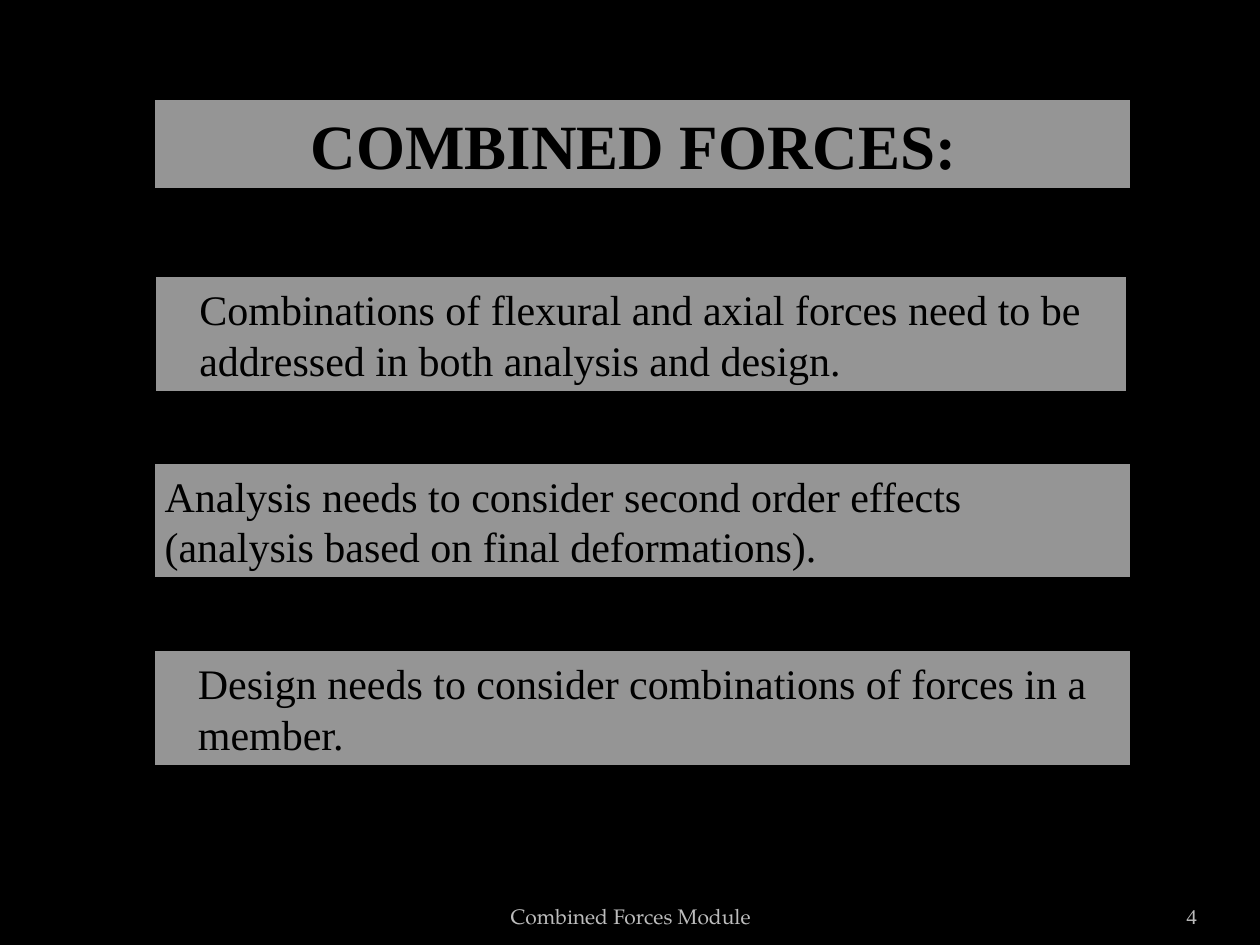
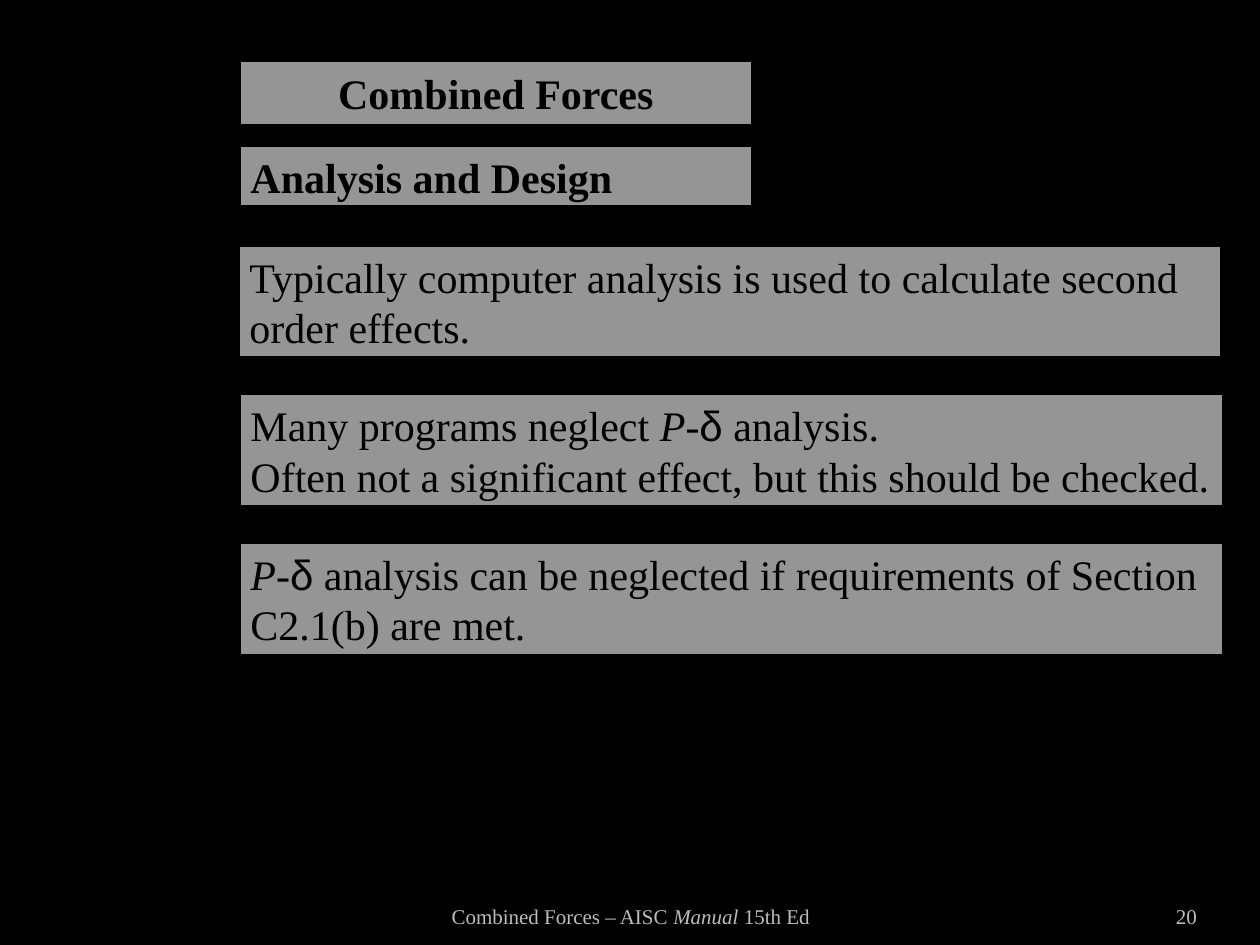
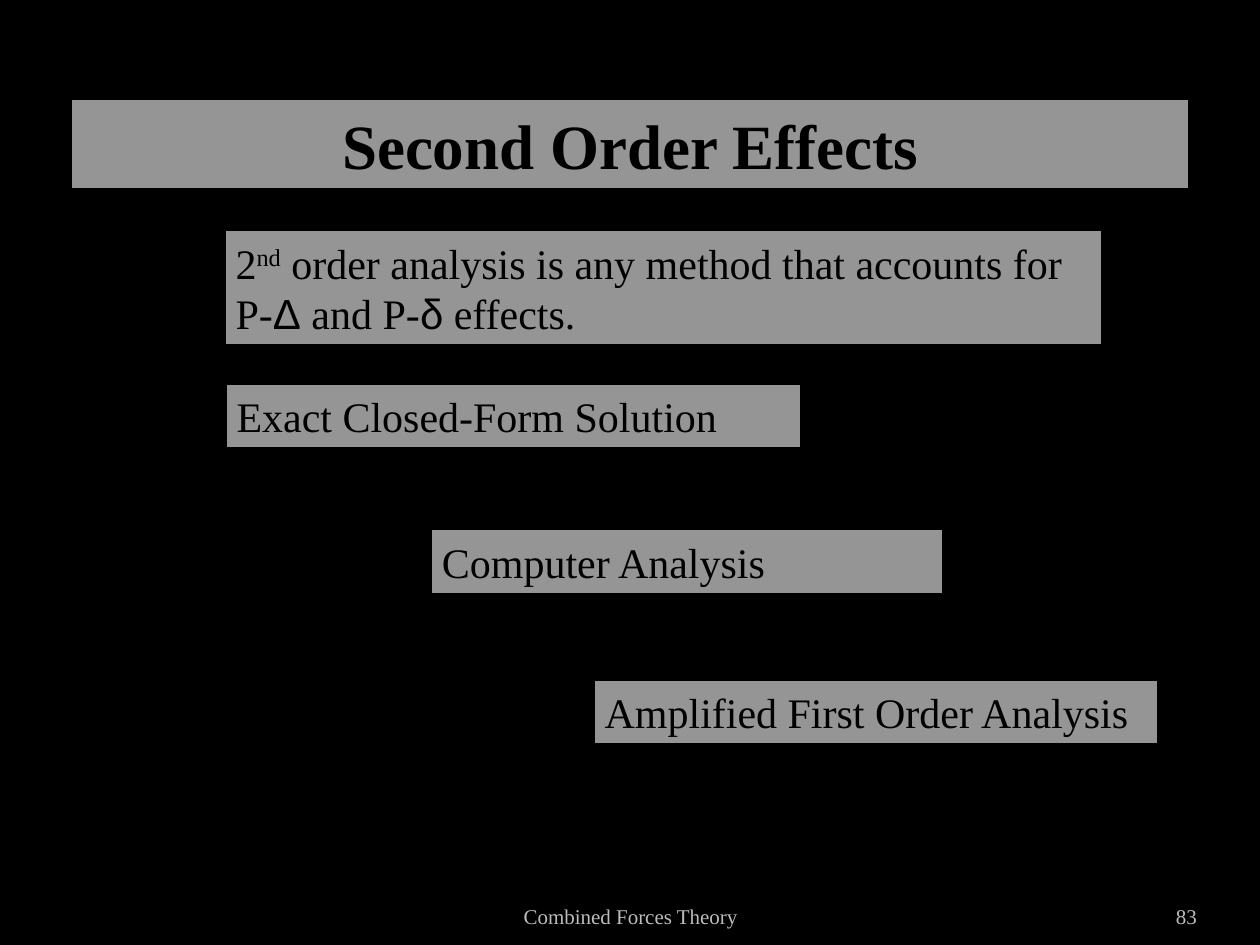
"""Build three slides on combined forces: grey translucent cards on black."""
from pptx import Presentation
from pptx.dml.color import RGBColor
from pptx.enum.shapes import MSO_SHAPE as Shape
from pptx.enum.text import MSO_ANCHOR as Anchor, MSO_AUTO_SIZE as AutoSize, PP_ALIGN as Align
from pptx.oxml.ns import qn
from pptx.util import Cm, Pt
from lxml import etree

SERIF, GREEK, FOOTER_SERIF = "Times New Roman", "Arial", "TeX Gyre Pagella"
BLACK, CARD, MUTED = "000000", "F2F2F2", "BCBCBC"
CARD_ALPHA = "62000"
INSET = 0.25
INDENTED = 0.92


def paint(fill, color):
    """Make a fill (of a shape, line or font) solid in a hex colour."""
    fill.solid()
    fill.fore_color.rgb = RGBColor.from_string(color)


def write(frame, lines, size, color, align=Align.LEFT, bold=False, name=SERIF):
    """Write lines of plain text or of (text, style) pieces into a frame."""
    frame.word_wrap = True
    frame.auto_size = AutoSize.NONE
    for number, pieces in enumerate(lines):
        para = frame.add_paragraph() if number else frame.paragraphs[0]
        para.alignment = align
        para.font.name, para.font.size, para.font.bold = name, Pt(size), bold
        paint(para.font.fill, color)
        for text, style in [(pieces, "")] if isinstance(pieces, str) else pieces:
            span = para.add_run()
            span.text = text
            if style == "italic":
                span.font.italic = True
            elif style == "greek":
                span.font.name = GREEK
            elif style == "super":
                span._r.get_or_add_rPr().set("baseline", "30000")


P_DELTA = [("P", "italic"), ("-", ""), ("δ", "greek")]

SLIDES = [
    dict(
        title=("COMBINED FORCES:", 36, 3.07, 1.96, 19.76, 1.88),
        right_inset=0.6,
        footer="Combined Forces Module", footer_font=FOOTER_SERIF, number="4",
        cards=[
            (3.1, 5.54, 19.66, 2.39, INDENTED, False,
             ["Combinations of flexural and axial forces need to be addressed in both analysis and design."]),
            (3.07, 9.3, 19.76, 2.39, INSET, False,
             ["Analysis needs to consider second order effects (analysis based on final deformations)."]),
            (3.07, 13.08, 19.76, 2.39, INDENTED, False,
             ["Design needs to consider combinations of forces in a member."]),
        ],
    ),
    dict(
        title=("Combined Forces", 24, 4.8, 1.19, 10.39, 1.37),
        right_inset=INSET,
        footer=[("Combined Forces – AISC ", ""), ("Manual ", "italic"), ("15th Ed", "")],
        footer_font=SERIF, number="20",
        cards=[
            (4.8, 2.92, 10.39, 1.27, INSET, True, ["Analysis and Design"]),
            (4.78, 4.93, 19.86, 2.31, INSET, False,
             ["Typically computer analysis is used to calculate second order effects."]),
            (4.8, 7.92, 19.89, 2.31, INSET, False,
             [[("Many programs neglect ", ""), *P_DELTA, (" analysis.", "")],
              "Often not a significant effect, but this should be checked."]),
            (4.8, 10.92, 19.89, 2.31, INSET, False,
             [[*P_DELTA, (" analysis can be neglected if requirements of Section C2.1(b) are met.", "")]]),
        ],
    ),
    dict(
        title=("Second Order Effects", 36, 1.4, 1.96, 22.61, 1.88),
        right_inset=INSET,
        footer="Combined Forces Theory", footer_font=SERIF, number="83",
        cards=[
            (4.5, 4.6, 17.75, 2.39, INSET, False,
             [[("2", ""), ("nd", "super"), (" order analysis is any method that accounts for P-", ""),
               ("Δ", "greek"), (" and P-", ""), ("δ", "greek"), (" effects.", "")]]),
            (4.52, 7.7, 11.66, 1.37, INSET, False, ["Exact Closed-Form Solution"]),
            (8.66, 10.64, 10.39, 1.37, INSET, False, ["Computer Analysis"]),
            (11.94, 13.67, 11.43, 1.37, INSET, False, ["Amplified First Order Analysis"]),
        ],
    ),
]

deck = Presentation()
deck.slide_width, deck.slide_height = Cm(25.4), Cm(19.05)
paint(deck.slide_master.background.fill, BLACK)
title_only = deck.slide_layouts[5]

for content in SLIDES:
    page = deck.slides.add_slide(title_only)

    heading, size, *place = content["title"]
    title = page.shapes.title
    title.left, title.top, title.width, title.height = map(Cm, place)
    write(title.text_frame, [heading], size, BLACK, Align.CENTER, bold=True)
    panels = [(title, INSET)]

    for left, top, width, height, left_inset, bold, lines in content["cards"]:
        box = page.shapes.add_shape(Shape.RECTANGLE, Cm(left), Cm(top), Cm(width), Cm(height))
        box.shadow.inherit = False
        write(box.text_frame, lines, 24, BLACK, bold=bold)
        panels.append((box, left_inset))

    for panel, left_inset in panels:
        paint(panel.fill, CARD)
        tint = panel._element.spPr.find(qn("a:solidFill")).find(qn("a:srgbClr"))
        etree.SubElement(tint, qn("a:alpha")).set("val", CARD_ALPHA)
        paint(panel.line.fill, BLACK)
        panel.line.width = Pt(3)
        frame = panel.text_frame
        frame.vertical_anchor = Anchor.MIDDLE
        frame.margin_left, frame.margin_right = Cm(left_inset), Cm(content["right_inset"])

    for text, left, width, inset, align, name in (
        (content["footer"], 8.69, 8.05, INSET, Align.CENTER, content["footer_font"]),
        (content["number"], 22.02, 2.11, 0, Align.RIGHT, SERIF),
    ):
        note = page.shapes.add_textbox(Cm(left), Cm(17.83), Cm(width), Cm(1.02))
        note.text_frame.vertical_anchor = Anchor.BOTTOM
        note.text_frame.margin_left = note.text_frame.margin_right = Cm(inset)
        write(note.text_frame, [text], 12, MUTED, align, name=name)

deck.save("out.pptx")
